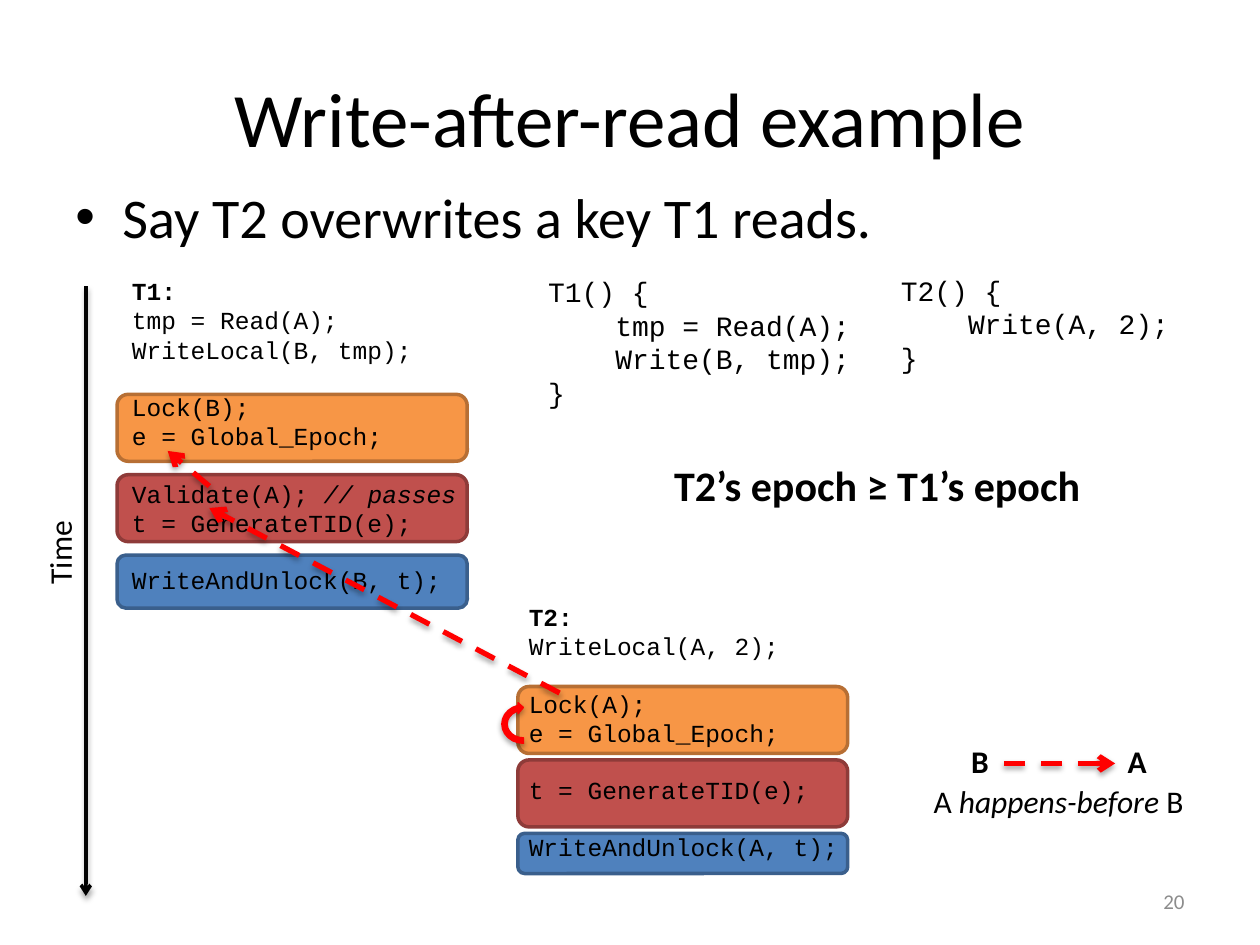
"""Build the write-after-read example slide."""
from dataclasses import dataclass
from typing import Optional

import pptx
import pptx.dml.color
import pptx.enum.dml
import pptx.enum.shapes
import pptx.enum.text
import pptx.oxml
import pptx.oxml.ns
import pptx.util
from pptx.util import Cm

RGBColor = pptx.dml.color.RGBColor
Pt = pptx.util.Pt
ALIGN = pptx.enum.text.PP_ALIGN
ANCHOR = pptx.enum.text.MSO_ANCHOR
SHAPE = pptx.enum.shapes.MSO_SHAPE

BLACK = RGBColor(0x00, 0x00, 0x00)
GRAY = RGBColor(0x8C, 0x8C, 0x8C)
RED = RGBColor(0xFF, 0x00, 0x00)
ORANGE = RGBColor(0xF7, 0x96, 0x46)
ORANGE_EDGE = RGBColor(0xB7, 0x6F, 0x34)
BRICK = RGBColor(0xC0, 0x50, 0x4D)
BRICK_EDGE = RGBColor(0x8E, 0x3B, 0x39)
BLUE = RGBColor(0x4F, 0x81, 0xBD)
BLUE_EDGE = RGBColor(0x3A, 0x5F, 0x8C)
PHASE_COLORS = ((ORANGE, ORANGE_EDGE), (BRICK, BRICK_EDGE), (BLUE, BLUE_EDGE))

BODY, CODE = "Calibri", "Courier New"
CODE_GAP = Pt(15.86)
CODE_INDENT = Pt(38.4)


@dataclass(frozen=True)
class Piece:
    """A stretch of text in one style."""
    text: str
    bold: bool = False
    italic: bool = False


@dataclass(frozen=True)
class Line:
    """A paragraph, optionally set apart or indented."""
    pieces: tuple[Piece, ...]
    gap: bool = False
    indent: bool = False


@dataclass(frozen=True)
class Label:
    """A text box in centimetres with its type style."""
    box: tuple[float, float, float, float]
    lines: tuple[Line, ...]
    size: float
    font: str = BODY
    color: RGBColor = BLACK
    align: ALIGN = ALIGN.LEFT
    anchor: ANCHOR = ANCHOR.TOP
    wrap: bool = False
    rotation: float = 0
    bullet: Optional[str] = None


@dataclass(frozen=True)
class Arrow:
    """A straight arrow in centimetres."""
    start: tuple[float, float]
    end: tuple[float, float]
    color: RGBColor = RED
    width: float = 3
    dashed: bool = True


@dataclass(frozen=True)
class Phases:
    """The stacked commit phases of one transaction."""
    left: float
    top: float
    width: float
    gap: float
    heights: tuple[float, float, float]


def line(text: str, bold: bool = False, gap: bool = False, indent: bool = False) -> Line:
    """Return a line in a single style."""
    return Line((Piece(text, bold),), gap, indent)


def add_label(slide, label: Label) -> None:
    """Draw a text box run by run."""
    holder = slide.shapes.add_textbox(*map(Cm, label.box))
    holder.rotation = label.rotation
    frame = holder.text_frame
    frame.word_wrap = label.wrap
    frame.vertical_anchor = label.anchor
    for index, entry in enumerate(label.lines):
        paragraph = frame.paragraphs[0] if index == 0 else frame.add_paragraph()
        paragraph.alignment = label.align
        if entry.gap:
            paragraph.space_before = CODE_GAP
        properties = paragraph._p.get_or_add_pPr()
        if entry.indent:
            properties.set("marL", str(CODE_INDENT))
        if label.bullet:
            properties.set("marL", str(Cm(0.95)))
            properties.set("indent", str(Cm(-0.95)))
            namespace = pptx.oxml.ns.nsdecls("a")
            properties.append(pptx.oxml.parse_xml(f'<a:buFont {namespace} typeface="Arial"/>'))
            properties.append(pptx.oxml.parse_xml(f'<a:buChar {namespace} char="{label.bullet}"/>'))
        for piece in entry.pieces:
            run = paragraph.add_run()
            run.text = piece.text
            run.font.name, run.font.size = label.font, Pt(label.size)
            run.font.bold, run.font.italic = piece.bold, piece.italic
            run.font.color.rgb = label.color


def add_shadow(shape) -> None:
    """Give a shape a soft shadow straight below."""
    shape._element.spPr.append(pptx.oxml.parse_xml(
        f'<a:effectLst {pptx.oxml.ns.nsdecls("a")}>'
        f'<a:outerShdw blurRad="{Pt(3.1)}" dist="{Pt(1.8)}" dir="5400000" rotWithShape="0">'
        '<a:srgbClr val="000000"><a:alpha val="35000"/></a:srgbClr>'
        '</a:outerShdw></a:effectLst>'))


def add_arrow(slide, arrow: Arrow) -> None:
    """Draw a shadowed arrow."""
    shaft = slide.shapes.add_connector(
        pptx.enum.shapes.MSO_CONNECTOR.STRAIGHT, *map(Cm, arrow.start + arrow.end))
    shaft.line.color.rgb = arrow.color
    shaft.line.width = Pt(arrow.width)
    if arrow.dashed:
        shaft.line.dash_style = pptx.enum.dml.MSO_LINE.DASH
    shaft.line._get_or_add_ln().append(pptx.oxml.parse_xml(
        f'<a:tailEnd {pptx.oxml.ns.nsdecls("a")} type="arrow"/>'))
    add_shadow(shaft)


def add_filled(slide, kind: SHAPE, box: tuple, fill: RGBColor, edge: RGBColor, width: float):
    """Draw a preset shape with a solid fill and edge."""
    shape = slide.shapes.add_shape(kind, *map(Cm, box))
    shape.fill.solid()
    shape.fill.fore_color.rgb = fill
    shape.line.color.rgb = edge
    shape.line.width = Pt(width)
    return shape


def add_phases(slide, phases: Phases) -> None:
    """Stack the lock, validate and write blocks."""
    top = phases.top
    for height, (fill, edge) in zip(phases.heights, PHASE_COLORS):
        block = add_filled(slide, SHAPE.ROUNDED_RECTANGLE,
                           (phases.left, top, phases.width, height), fill, edge, 2)
        block.shadow.inherit = False
        top += height + phases.gap


T1_STEPS = (
    line("T1:", bold=True), line("tmp = Read(A);"), line("WriteLocal(B, tmp);"),
    line("Lock(B);", gap=True), line("e = Global_Epoch;"),
    Line((Piece("Validate(A); "), Piece("// passes", italic=True)), gap=True),
    line("t = GenerateTID(e);"), line("WriteAndUnlock(B, t);", gap=True))
T2_STEPS = (
    line("T2:", bold=True), line("WriteLocal(A, 2);"),
    line("Lock(A);", gap=True), line("e = Global_Epoch;"),
    line("t = GenerateTID(e);", gap=True), line("WriteAndUnlock(A, t);", gap=True))
T1_SOURCE = (line("T1() {"), line("tmp = Read(A);", indent=True),
             line("Write(B, tmp);", indent=True), line("}"))
T2_SOURCE = (line("T2() {"), line("Write(A, 2);", indent=True), line("}"))
HAPPENS_BEFORE = (Line((Piece("A "), Piece("happens-before ", italic=True), Piece("B"))),)

LABELS = (
    Label((1.27, 0.76, 22.86, 3.18), (line("Write-after-read example"),), 44,
          align=ALIGN.CENTER, anchor=ANCHOR.MIDDLE, wrap=True),
    Label((1.27, 3.55, 22.86, 12.57), (line("Say T2 overwrites a key T1 reads."),), 32,
          wrap=True, bullet="•"),
    Label((10.41, 12.01, 7.14, 5.64), T2_STEPS, 14, CODE, wrap=True),
    Label((2.41, 5.44, 8.86, 6.83), T1_STEPS, 14, CODE, wrap=True),
    Label((18.21, 17.65, 5.92, 1.02), (line("20"),), 12, color=GRAY,
          align=ALIGN.RIGHT, anchor=ANCHOR.MIDDLE, wrap=True),
    Label((13.34, 9.14, 8.89, 1.27), (line("T2’s epoch ≥ T1’s epoch", bold=True),), 24),
    Label((0.3, 10.62, 1.8, 1.02), (line("Time"),), 18, rotation=270),
    Label((17.91, 5.38, 5.99, 2.31), T2_SOURCE, 16, CODE),
    Label((10.8, 5.41, 6.68, 3), T1_SOURCE, 16, CODE),
    Label((19.33, 14.83, 0.86, 1.02), (line("B", bold=True),), 18),
    Label((22.48, 14.83, 0.91, 1.02), (line("A", bold=True),), 18),
    Label((18.57, 15.65, 5.69, 1.02), HAPPENS_BEFORE, 18),
)
ARROWS = (
    Arrow((4.22, 9.8), (3.38, 9.09)),
    Arrow((11.28, 13.97), (4.22, 10.24)),
    Arrow((1.73, 5.77), (1.73, 18.06), BLACK, 2, dashed=False),
    Arrow((20.24, 15.39), (22.48, 15.39)),
)
T1_PHASES = Phases(2.36, 7.95, 7.06, 0.27, (1.35, 1.35, 1.07))
T2_PHASES = Phases(10.44, 13.84, 6.65, 0.13, (1.35, 1.35, 0.81))


def main() -> None:
    """Assemble and save the slide."""
    deck = pptx.Presentation()
    deck.slide_width, deck.slide_height = Cm(25.4), Cm(19.05)
    slide = deck.slides.add_slide(deck.slide_layouts[6])
    for phases in (T1_PHASES, T2_PHASES):
        add_phases(slide, phases)
    for label in LABELS:
        add_label(slide, label)
    for arrow in ARROWS:
        add_arrow(slide, arrow)
    epoch_order = add_filled(slide, SHAPE.CIRCULAR_ARROW, (10.11, 14.1, 0.89, 0.99), RED, RED, 0.75)
    epoch_order.rotation = 270
    add_shadow(epoch_order)
    deck.save("out.pptx")


if __name__ == "__main__":
    main()
